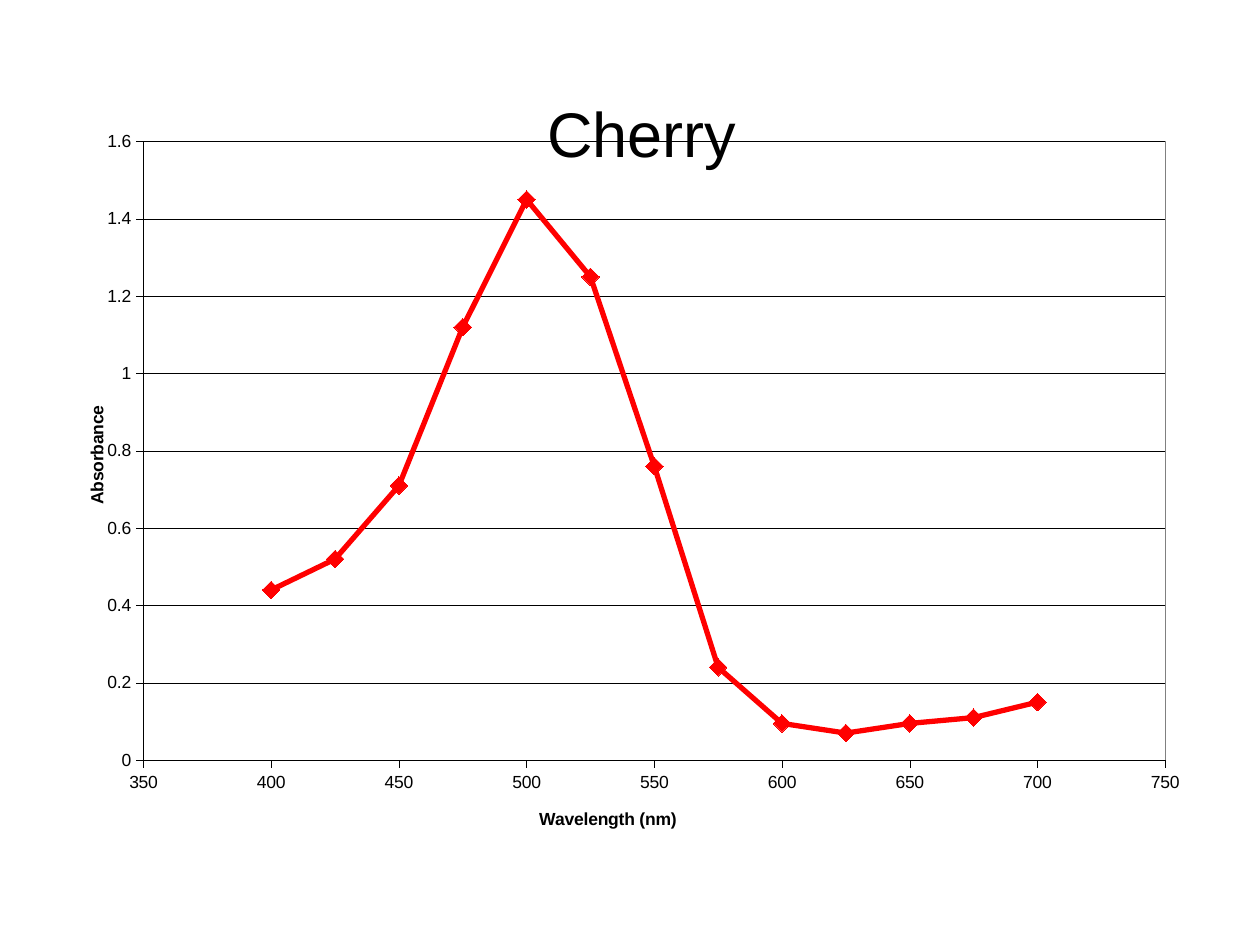
from dataclasses import dataclass
from typing import Optional

from lxml.etree import SubElement
from pptx import Presentation
from pptx.chart.data import XyChartData
from pptx.dml.color import RGBColor
from pptx.enum.chart import XL_CHART_TYPE, XL_MARKER_STYLE, XL_TICK_MARK
from pptx.oxml import parse_xml
from pptx.oxml.ns import nsdecls, qn
from pptx.util import Inches, Pt

COLORS = {"text": "000000", "curve": "FF0000", "frame": "808080"}
FONT = "Arial"
WAVELENGTHS = range(400, 701, 25)
ABSORBANCES = [0.44, 0.52, 0.71, 1.12, 1.45, 1.25, 0.76,
               0.24, 0.095, 0.07, 0.095, 0.11, 0.15]


@dataclass
class TitleSpec:
    text: str
    size: int
    bold: bool
    x: float
    y: float


@dataclass
class AxisSpec:
    title: TitleSpec
    minimum: float
    maximum: float
    step: float
    number_format: str


CHART_TITLE = TitleSpec("Cherry", 36, False, 0.417, 0.037)
WAVELENGTH_AXIS = AxisSpec(TitleSpec("Wavelength (nm)", 10, True, 0.417, 0.95), 350, 750, 50, "General")
ABSORBANCE_AXIS = AxisSpec(TitleSpec("Absorbance", 10, True, 0.017, 0.442), 0, 1.6, 0.2, "General")


def color(name: str) -> RGBColor:
    return RGBColor.from_string(COLORS[name])


def style_font(font, size: int, bold: bool = False) -> None:
    font.name, font.size, font.bold = FONT, Pt(size), bold
    font.color.rgb = color("text")


def style_line(line, name: str, width: float) -> None:
    line.color.rgb = color(name)
    line.width = Pt(width)


def make_layout(x: float, y: float, width: Optional[float] = None, height: Optional[float] = None):
    """Manual chart layout in fractions of the chart's size."""
    layout = parse_xml(f"<c:layout {nsdecls('c')}><c:manualLayout/></c:layout>")
    manual = layout[0]
    values = {"xMode": "edge", "yMode": "edge", "x": x, "y": y}
    if width is not None:
        values = {"layoutTarget": "inner", **values, "w": width, "h": height}
    for tag, value in values.items():
        SubElement(manual, qn(f"c:{tag}")).set("val", str(value))
    return layout


def remove_layout(element) -> None:
    for layout in element.findall(qn("c:layout")):
        element.remove(layout)


def write_title(title, spec: TitleSpec) -> None:
    run = title.text_frame.paragraphs[0].add_run()
    run.text = spec.text
    style_font(run.font, spec.size, spec.bold)
    element = title._element
    remove_layout(element)
    element.find(qn("c:tx")).addnext(make_layout(spec.x, spec.y))


def format_axis(axis, spec: AxisSpec) -> None:
    axis.minimum_scale, axis.maximum_scale = spec.minimum, spec.maximum
    axis.major_unit = spec.step
    axis.major_tick_mark = XL_TICK_MARK.OUTSIDE
    axis.minor_tick_mark = XL_TICK_MARK.NONE
    axis.tick_labels.number_format = spec.number_format
    axis.tick_labels.number_format_is_linked = False
    style_font(axis.tick_labels.font, 10)
    style_line(axis.format.line, "text", 0.25)
    axis.has_title = True
    write_title(axis.axis_title, spec.title)


def format_plot_area(chart) -> None:
    plot_area = chart._chartSpace.chart.plotArea
    remove_layout(plot_area)
    plot_area.insert(0, make_layout(0.071, 0.112, 0.901, 0.782))
    plot_area.append(parse_xml(
        f"<c:spPr {nsdecls('c', 'a')}><a:noFill/><a:ln w=\"{Pt(0.25)}\"><a:solidFill>"
        f"<a:srgbClr val=\"{COLORS['frame']}\"/></a:solidFill></a:ln></c:spPr>"))


def format_curve(series) -> None:
    series.smooth = True
    style_line(series.format.line, "curve", 3)
    marker = series.marker
    marker.style, marker.size = XL_MARKER_STYLE.DIAMOND, 10
    marker.format.fill.solid()
    marker.format.fill.fore_color.rgb = color("curve")
    style_line(marker.format.line, "curve", 0.75)


def add_spectrum(slide) -> None:
    data = XyChartData()
    points = data.add_series("Cherry")
    for wavelength, absorbance in zip(WAVELENGTHS, ABSORBANCES):
        points.add_data_point(wavelength, absorbance)
    chart = slide.shapes.add_chart(
        XL_CHART_TYPE.XY_SCATTER_SMOOTH, Inches(0.5), Inches(0.42),
        Inches(9), Inches(6.28), data).chart
    style_font(chart.font, 10)
    chart.has_legend = False

    # Title and plot frame
    chart.has_title = True
    write_title(chart.chart_title, CHART_TITLE)
    chart.chart_title.include_in_layout = True
    format_plot_area(chart)

    # Axes and gridlines
    format_axis(chart.category_axis, WAVELENGTH_AXIS)
    format_axis(chart.value_axis, ABSORBANCE_AXIS)
    chart.category_axis.has_major_gridlines = False
    chart.value_axis.has_major_gridlines = True
    style_line(chart.value_axis.major_gridlines.format.line, "text", 0.25)

    # Absorbance curve
    plot = chart.plots[0]
    plot.vary_by_categories = False
    format_curve(plot.series[0])


def main() -> None:
    presentation = Presentation()
    presentation.slide_width, presentation.slide_height = Inches(10), Inches(7.5)
    slide = presentation.slides.add_slide(presentation.slide_layouts[6])
    add_spectrum(slide)
    presentation.save("out.pptx")


if __name__ == "__main__":
    main()
